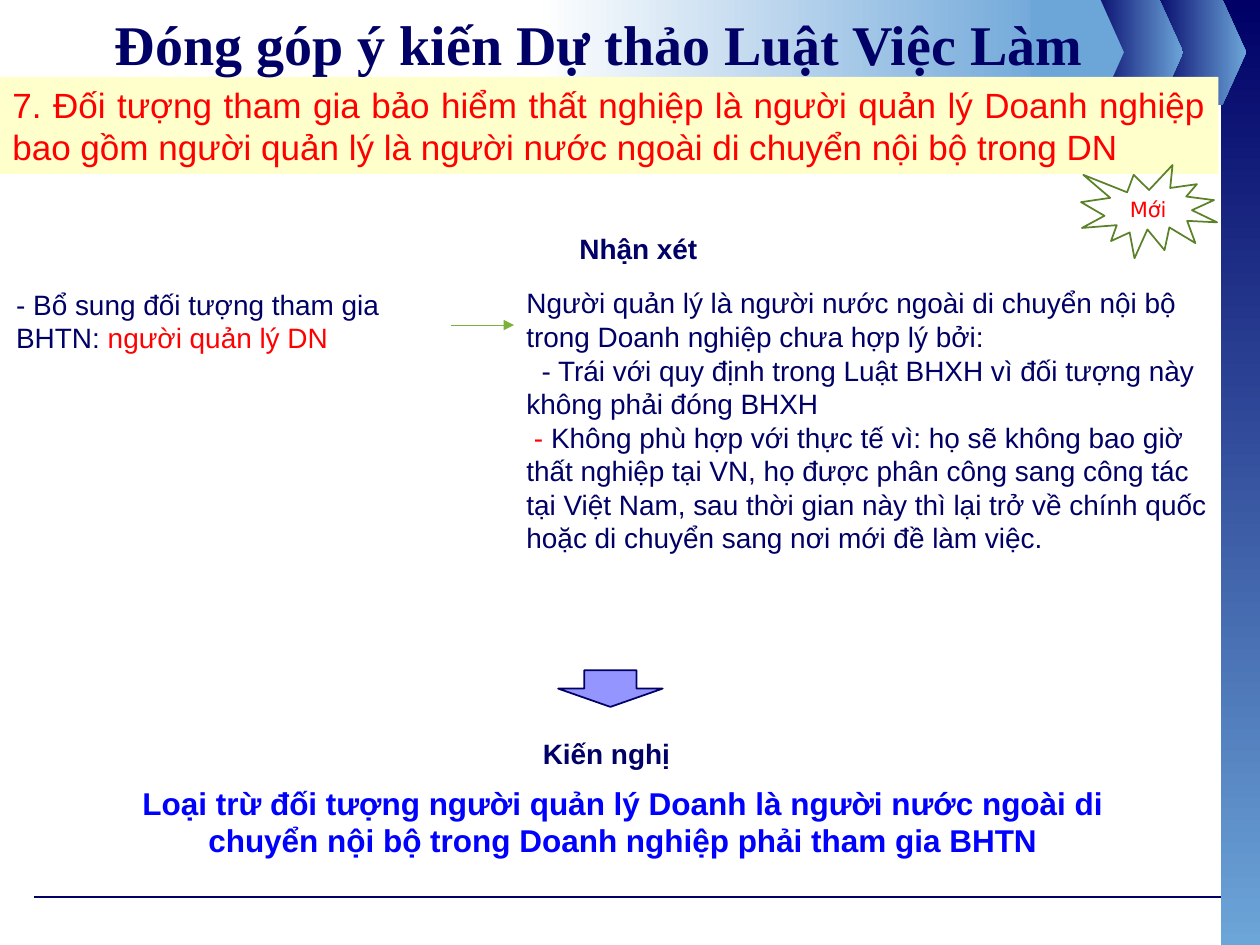
from dataclasses import dataclass

from lxml.etree import SubElement
from pptx import Presentation
from pptx.dml.color import RGBColor as RGB
from pptx.enum.shapes import MSO_CONNECTOR as Conn, MSO_SHAPE as Shape
from pptx.enum.text import MSO_ANCHOR as Anchor, MSO_AUTO_SIZE as Auto, PP_ALIGN as Align
from pptx.oxml.ns import qn
from pptx.util import Inches, Pt


@dataclass(frozen=True)
class Theme:
    """Colours, fonts and type sizes of the slide."""
    navy: str = "000066"
    sky: str = "6CA5D8"
    white: str = "FFFFFF"
    cream: str = "FFFFCC"
    red: str = "FF0000"
    blue: str = "0000FF"
    lilac: str = "9595FF"
    green: str = "7DB038"
    dark_green: str = "5C8229"
    body_font: str = "Arial"
    title_font: str = "Times New Roman"
    badge_font: str = "DejaVu Sans"
    title: int = 32
    heading: int = 20
    advice: int = 18
    body: int = 16
    badge: int = 12


T = Theme()
COLS, ROWS = 100, 75
WIDTH, HEIGHT = Inches(10), Inches(7.5)


def grid(x, y, w, h):
    """Turn columns and rows of the slide grid into lengths."""
    cw, rh = WIDTH / COLS, HEIGHT / ROWS
    return int(x * cw), int(y * rh), int(w * cw), int(h * rh)


def add_shape(s, kind, cell, fill=None, line=None, angle=0):
    """Add a preset shape; a pair of colours as fill makes a gradient."""
    sp = s.shapes.add_shape(kind, *grid(*cell))
    sp.shadow.inherit = False
    if isinstance(fill, tuple):
        sp.fill.gradient()
        sp.fill.gradient_angle = angle
        for stop, color in zip(sp.fill.gradient_stops, fill):
            stop.color.rgb = RGB.from_string(color)
    elif fill:
        sp.fill.solid()
        sp.fill.fore_color.rgb = RGB.from_string(fill)
    else:
        sp.fill.background()
    if line:
        sp.line.color.rgb = RGB.from_string(line)
        sp.line.width = Pt(1)
    else:
        sp.line.fill.background()
    return sp


def add_line(s, x1, x2, y, color, width, arrow=False):
    """Add a horizontal line, with an arrowhead at its end if asked."""
    left, top, length, _ = grid(x1, y, x2 - x1, 0)
    c = s.shapes.add_connector(Conn.STRAIGHT, left, top, left + length, top)
    c.line.color.rgb = RGB.from_string(color)
    c.line.width = Pt(width)
    if arrow:
        SubElement(c.line._get_or_add_ln(), qn("a:tailEnd"), type="triangle")
    SubElement(c._element.spPr, qn("a:effectLst"))


def write(sp, paragraphs, size, color=T.navy, bold=False, font=T.body_font,
          align=Align.LEFT, anchor=Anchor.TOP, wrap=True):
    """Fill a shape with paragraphs, each an indent and (text, colour) runs."""
    tf = sp.text_frame
    tf.word_wrap = wrap
    tf.auto_size = Auto.NONE
    tf.vertical_anchor = anchor
    for i, (indent, runs) in enumerate(paragraphs):
        p = tf.add_paragraph() if i else tf.paragraphs[0]
        p.alignment = align
        if indent:
            p._p.get_or_add_pPr().set("indent", str(Inches(indent)))
        p.font.size, p.font.name, p.font.bold = Pt(size), font, bold
        for text, run_color in runs:
            r = p.add_run()
            r.text = text
            r.font.color.rgb = RGB.from_string(run_color or color)


def plain(text):
    """Give one paragraph with one run in the default colour."""
    return [(0, [(text, None)])]


def add_text(s, cell, paragraphs, size, **style):
    """Add a text box."""
    write(s.shapes.add_textbox(*grid(*cell)), paragraphs, size, **style)


def add_decoration(s):
    """Draw the footer rule, the side bar and the header chevrons."""
    fade = (T.navy, T.sky)
    add_line(s, 2.7, 96.9, 71.2, T.navy, 0.75)
    add_shape(s, Shape.RECTANGLE, (96.9, 0, 3.1, 75), fade, angle=270)
    chevrons = [(91.4, 7.5, fade), (86.4, 7.5, fade), (81.8, 7.4, T.sky)]
    for x, w, fill in chevrons[:2]:
        add_shape(s, Shape.PENTAGON, (x, 0, w, 8.3), fill).adjustments[0] = 0.25
    add_shape(s, Shape.RECTANGLE, (42.5, 0, 41.8, 8.3), (T.white, T.sky))
    x, w, fill = chevrons[2]
    add_shape(s, Shape.PENTAGON, (x, 0, w, 8.3), fill).adjustments[0] = 0.25


def add_title(s, text):
    """Place the title above the header decoration."""
    sp = s.shapes.title
    sp.left, sp.top, sp.width, sp.height = grid(6.7, 0.3, 81.7, 6.2)
    write(sp, plain(text), T.title, bold=True, font=T.title_font,
          align=Align.CENTER, anchor=Anchor.MIDDLE)
    sp._element.getparent().append(sp._element)


def main():
    """Build and save the slide."""
    prs = Presentation()
    prs.slide_width, prs.slide_height = WIDTH, HEIGHT
    s = prs.slides.add_slide(prs.slide_layouts[5])
    add_decoration(s)

    band = add_shape(s, Shape.RECTANGLE, (0, 6.1, 96.7, 7.7), T.cream)
    write(band, plain("7. Đối tượng tham gia bảo hiểm thất nghiệp là người quản lý Doanh nghiệp "
                      "bao gồm người quản lý là người nước ngoài di chuyển nội bộ trong DN"),
          T.heading, T.red, align=Align.JUSTIFY)
    badge = add_shape(s, Shape.EXPLOSION1, (85.8, 13.1, 10.8, 7.4), line=T.dark_green)
    write(badge, plain("Mới"), T.badge, T.red, font=T.badge_font,
          align=Align.CENTER, anchor=Anchor.MIDDLE)

    add_text(s, (0.3, 22.3, 35.5, 6.4),
             [(0, [("- Bổ sung đối tượng tham gia BHTN: ", None), ("người quản lý DN", T.red)])],
             T.body)
    add_text(s, (45, 17.9, 11.5, 3.7), plain("Nhận xét"), T.body, bold=True, wrap=False)
    add_line(s, 35.8, 40.8, 25.8, T.green, 0.5, arrow=True)
    add_text(s, (40.8, 22.2, 56, 22.6), [
        (0, [("Người quản lý là người nước ngoài di chuyển nội bộ trong Doanh nghiệp "
              "chưa hợp lý bởi:", None)]),
        (0.12, [("- Trái với quy định trong Luật BHXH vì đối tượng này không phải đóng BHXH",
                 None)]),
        (0.06, [("- ", T.red),
                ("Không phù hợp với thực tế vì: họ sẽ không bao giờ thất nghiệp tại VN, họ được "
                 "phân công sang công tác tại Việt Nam, sau thời gian này thì lại trở về chính "
                 "quốc hoặc di chuyển sang nơi mới đề làm việc.", None)]),
    ], T.body)

    add_shape(s, Shape.DOWN_ARROW, (44.3, 53.2, 8.3, 2.9), T.lilac, T.navy)
    add_text(s, (42.1, 58, 12.2, 3.7), plain("Kiến nghị"), T.body, bold=True, wrap=False)
    add_text(s, (7.8, 61.7, 83.3, 7.1),
             plain("Loại trừ đối tượng người quản lý Doanh là người nước ngoài di chuyển nội bộ "
                   "trong Doanh nghiệp phải tham gia BHTN"),
             T.advice, color=T.blue, bold=True, align=Align.CENTER)
    add_title(s, "Đóng góp ý kiến Dự thảo Luật Việc Làm")
    prs.save("out.pptx")


if __name__ == "__main__":
    main()
